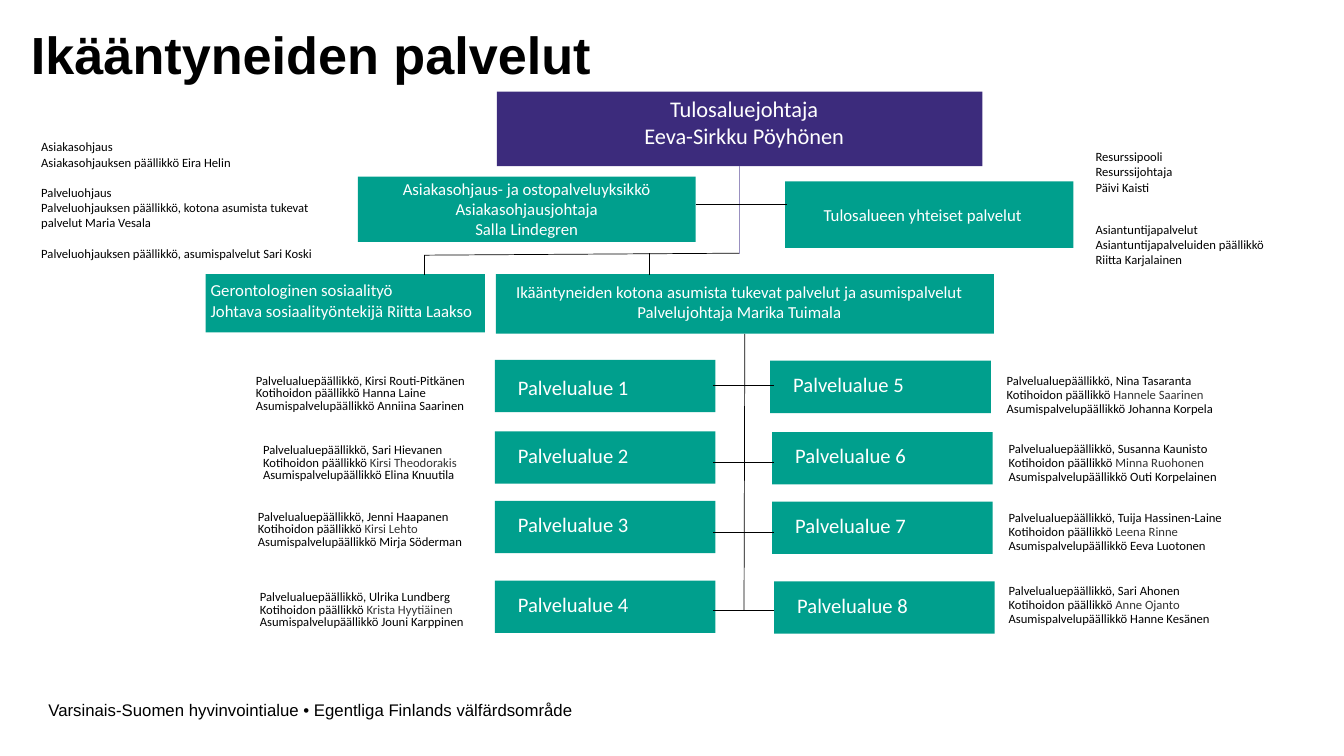
import pptx
import pptx.dml.color
import pptx.enum.shapes
import pptx.enum.text
import pptx.oxml.ns
import pptx.util
from lxml import etree

Cm = pptx.util.Cm
Pt = pptx.util.Pt
LEFT = pptx.enum.text.PP_ALIGN.LEFT
CENTER = pptx.enum.text.PP_ALIGN.CENTER
COLOURS = {
    "teal": "009F8D",
    "purple": "3C2B7C",
    "lilac": "9990C0",
    "black": "000000",
    "grey": "333333",
    "white": "FFFFFF",
}


def colour(name):
    return pptx.dml.color.RGBColor.from_string(COLOURS[name])


def write_lines(text_frame, lines, size, colour_name, font="Calibri",
                alignment=LEFT, spacing=None, margins=(0.25, 0.13, 0.25)):
    """Each line is a list of runs; any run after the first is grey."""
    text_frame.word_wrap = True
    text_frame.auto_size = pptx.enum.text.MSO_AUTO_SIZE.NONE
    text_frame.vertical_anchor = pptx.enum.text.MSO_ANCHOR.TOP
    text_frame.margin_left, text_frame.margin_top, text_frame.margin_right = map(Cm, margins)
    text_frame.margin_bottom = 0
    for index, line in enumerate(lines):
        paragraph = text_frame.add_paragraph() if index else text_frame.paragraphs[0]
        paragraph.alignment = alignment
        if spacing:
            paragraph.line_spacing = Pt(spacing)
        for position, text in enumerate(line):
            run = paragraph.add_run()
            run.text = text
            run.font.name = font
            run.font.size = Pt(size)
            run.font.color.rgb = colour("grey" if position else colour_name)


presentation = pptx.Presentation()
presentation.slide_width = Cm(33.87)
presentation.slide_height = Cm(19.05)
slide = presentation.slides.add_slide(presentation.slide_layouts[5])

# Title
title = slide.shapes.title
title.left, title.top, title.width, title.height = Cm(0.53), Cm(0.43), Cm(21.03), Cm(1.85)
write_lines(title.text_frame, [["Ikääntyneiden palvelut"]], 37.3, "black", "Arial")
title.text_frame.paragraphs[0].runs[0].font.bold = True

# Management boxes: position, fill, text size, alignment, margins, lines
boxes = [
    ((12.52, 2.31, 12.24, 1.88), "purple", 16, CENTER, (0.48, 0.1, 0.25),
     ["Tulosaluejohtaja", "Eeva-Sirkku Pöyhönen"]),
    ((9.02, 4.45, 8.51, 1.65), "teal", 12, CENTER, (0.25, 0.05, 0.25),
     ["Asiakasohjaus- ja ostopalveluyksikkö", "Asiakasohjausjohtaja", "Salla Lindegren"]),
    ((19.79, 4.57, 7.26, 1.68), "teal", 12, CENTER, (0.25, 0.59, 0.58),
     ["Tulosalueen yhteiset palvelut"]),
    ((5.18, 6.91, 7.04, 1.47), "teal", 12, LEFT, (0.13, 0.15, 0),
     ["Gerontologinen sosiaalityö", "Johtava sosiaalityöntekijä Riitta Laakso"]),
    ((12.5, 6.91, 12.55, 1.5), "teal", 12, CENTER, (0.25, 0.18, 0.53),
     ["Ikääntyneiden kotona asumista tukevat palvelut ja asumispalvelut",
      "Palvelujohtaja Marika Tuimala"]),
]

# Service areas: box left and top, note left and top, three managers
service_areas = [
    (12.47, 9.07, 6.2, 9.32, "Kirsi Routi-Pitkänen", "Hanna Laine", "Anniina Saarinen"),
    (12.47, 10.87, 6.38, 11.07, "Sari Hievanen", "Kirsi Theodorakis", "Elina Knuutila"),
    (12.47, 12.62, 6.25, 12.75, "Jenni Haapanen", "Kirsi Lehto", "Mirja Söderman"),
    (12.47, 14.63, 6.3, 14.78, "Ulrika Lundberg", "Krista Hyytiäinen", "Jouni Karppinen"),
    (19.41, 9.09, 25.12, 9.3, "Nina Tasaranta", "Hannele Saarinen", "Johanna Korpela"),
    (19.46, 10.89, 25.17, 11.02, "Susanna Kaunisto", "Minna Ruohonen", "Outi Korpelainen"),
    (19.46, 12.64, 25.17, 12.75, "Tuija Hassinen-Laine", "Leena Rinne", "Eeva Luotonen"),
    (19.51, 14.65, 25.17, 14.58, "Sari Ahonen", "Anne Ojanto", "Hanne Kesänen"),
]

# Notes: position, line spacing, lines
notes = [
    ((27.36, 3.63, 5.23, 1.42), None,
     [["Resurssipooli"], ["Resurssijohtaja"], ["Päivi Kaisti"]]),
    ((27.36, 5.46, 6.2, 1.6), None,
     [["Asiantuntijapalvelut"], ["Asiantuntijapalveluiden päällikkö"], ["Riitta Karjalainen"]]),
]
for number, area in enumerate(service_areas, start=1):
    box_left, box_top, note_left, note_top, area_manager, home_care, housing = area
    text_top = 0.38 if number == 1 else 0.28
    boxes.append(((box_left, box_top, 5.56, 1.32), "teal", 14.7, LEFT,
                  (0.58, text_top, 0.25), [f"Palvelualue {number}"]))
    home_care_line = ["Kotihoidon päällikkö ", home_care]
    if number == 1:
        home_care_line = ["".join(home_care_line)]
    on_left = number <= 4
    notes.append(((note_left, note_top, 6.2 if on_left else 8, 1.32), 9 if on_left else 10, [
        [f"Palvelualuepäällikkö, {area_manager}"],
        home_care_line,
        [f"Asumispalvelupäällikkö {housing}"],
    ]))

for position, fill, size, alignment, margins, lines in boxes:
    box = slide.shapes.add_shape(pptx.enum.shapes.MSO_SHAPE.RECTANGLE, *map(Cm, position))
    box.shadow.inherit = False
    box.fill.solid()
    box.fill.fore_color.rgb = colour(fill)
    box.line.fill.background()
    write_lines(box.text_frame, [[line] for line in lines], size, "white",
                alignment=alignment, margins=margins)

for position, spacing, lines in notes:
    note = slide.shapes.add_textbox(*map(Cm, position))
    write_lines(note.text_frame, lines, 9, "black", spacing=spacing)

# Client guidance note, with a gap before each new group
guidance = slide.shapes.add_textbox(Cm(0.79), Cm(3.38), Cm(8.1), Cm(3.33))
write_lines(guidance.text_frame, [
    ["Asiakasohjaus"],
    ["Asiakasohjauksen päällikkö Eira Helin"],
    ["Palveluohjaus"],
    ["Palveluohjauksen päällikkö, kotona asumista tukevat palvelut Maria Vesala"],
    ["Palveluohjauksen päällikkö, asumispalvelut Sari Koski"],
], 9, "black")
for group_start in (2, 4):
    guidance.text_frame.paragraphs[group_start].space_before = Pt(11)

# Connecting lines
connections = [
    (18.64, 4.19, 18.64, 6.4, "lilac"),
    (17.53, 5.16, 19.84, 5.16, "black"),
    (10.69, 6.43, 10.69, 6.93, "black"),
    (10.69, 6.43, 18.62, 6.38, "black"),
    (16.36, 6.38, 16.36, 6.93, "black"),
    (18.77, 8.41, 18.75, 15.37, "black"),
]
connections += [(17.98, level, 19.51, level, "black") for level in (9.7, 11.65, 13.41, 15.37)]
for *ends, line_colour in connections:
    connector = slide.shapes.add_connector(
        pptx.enum.shapes.MSO_CONNECTOR.STRAIGHT, *map(Cm, ends))
    connector.line.color.rgb = colour(line_colour)
    connector.line.width = Pt(0.5)
    etree.SubElement(connector._element.spPr, pptx.oxml.ns.qn("a:effectLst"))

# Footer
footer = slide.shapes.add_textbox(Cm(0.97), Cm(17.5), Cm(15.49), Cm(0.76))
write_lines(footer.text_frame,
            [["Varsinais-Suomen hyvinvointialue • Egentliga Finlands välfärdsområde"]],
            12, "black", "Arial")

presentation.save("out.pptx")
